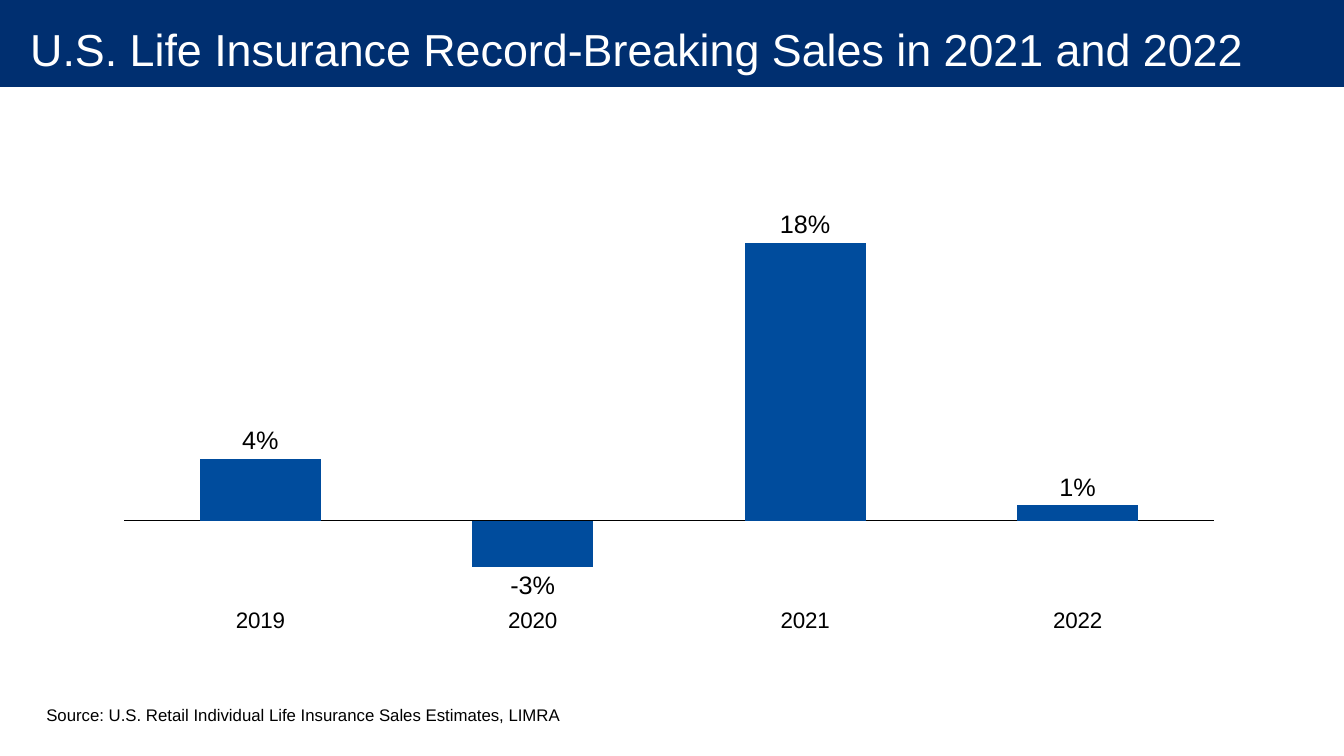
from lxml.etree import SubElement
from pptx import Presentation
from pptx.chart.data import CategoryChartData
from pptx.dml.color import RGBColor
from pptx.enum.chart import (XL_CHART_TYPE as ChartType, XL_LABEL_POSITION as LabelPosition,
                             XL_TICK_LABEL_POSITION as TickLabelPosition, XL_TICK_MARK as TickMark)
from pptx.enum.shapes import MSO_SHAPE as Shape
from pptx.enum.text import MSO_ANCHOR as Anchor
from pptx.oxml.ns import qn
from pptx.util import Pt

COLORS = {"banner": "002F70", "bar": "004C9D", "title": "FFFFFF", "text": "000000"}
SALES_GROWTH = {"2019": 0.04, "2020": -0.03, "2021": 0.18, "2022": 0.01}
PLOT_AREA = {"layoutTarget": "inner", "xMode": "edge", "yMode": "edge",
             "x": 0.054, "y": 0.162, "w": 0.94, "h": 0.709}
PAGE_WIDTH, PAGE_HEIGHT = 960, 540


def apply(target, values):
    for name, value in values.items():
        setattr(target, name, value)


class SlideBuilder:
    def __init__(self, page, font_name):
        self.page = page
        self.font_name = font_name

    def color(self, name):
        return RGBColor.from_string(COLORS[name])

    def style_font(self, font, size, color="text"):
        apply(font, {"name": self.font_name, "size": Pt(size), "bold": False})
        font.color.rgb = self.color(color)

    def banner(self, left, top, width, height):
        box = self.page.shapes.add_shape(Shape.RECTANGLE, Pt(left), Pt(top), Pt(width), Pt(height))
        box.shadow.inherit = False
        box.fill.solid()
        box.fill.fore_color.rgb = self.color("banner")
        box.line.fill.background()

    def text(self, content, left, top, width, height, size, color="text", **frame_format):
        box = self.page.shapes.add_textbox(Pt(left), Pt(top), Pt(width), Pt(height))
        apply(box.text_frame, {"word_wrap": True, **frame_format})
        para = box.text_frame.paragraphs[0]
        span = para.add_run()
        span.text = content
        self.style_font(span.font, size, color)

    def column_chart(self, values, left, top, width, height):
        data = CategoryChartData(number_format="0%")
        data.categories = list(values)
        data.add_series("Series 1", list(values.values()))
        chart = self.page.shapes.add_chart(ChartType.COLUMN_CLUSTERED, Pt(left), Pt(top),
                                           Pt(width), Pt(height), data).chart
        apply(chart, {"has_legend": False, "has_title": False})
        self.style_font(chart.font, 10)
        self.format_axes(chart)
        self.format_columns(chart.plots[0])
        self.place_plot_area(chart)

    def format_axes(self, chart):
        years = chart.category_axis
        apply(years, {"major_tick_mark": TickMark.NONE, "minor_tick_mark": TickMark.NONE,
                      "tick_label_position": TickLabelPosition.LOW})
        self.style_font(years.tick_labels.font, 16)
        years.format.line.width = Pt(0.75)
        years.format.line.color.rgb = self.color("text")
        growth = chart.value_axis
        apply(growth, {"visible": False, "has_major_gridlines": False,
                       "minimum_scale": -0.05, "maximum_scale": 0.2})
        apply(growth.tick_labels, {"number_format": "0%", "number_format_is_linked": False})

    def format_columns(self, plot):
        apply(plot, {"gap_width": 125, "vary_by_categories": False, "has_data_labels": True})
        series = plot.series[0]
        series.invert_if_negative = False
        series.format.fill.solid()
        series.format.fill.fore_color.rgb = self.color("bar")
        labels = series.data_labels
        apply(labels, {"show_value": True, "position": LabelPosition.OUTSIDE_END,
                       "number_format": "0%", "number_format_is_linked": False})
        self.style_font(labels.font, 18)

    def place_plot_area(self, chart):
        """Fix the inner plot area as fractions of the chart frame."""
        plot_area = chart.element.find(f".//{qn('c:plotArea')}")
        for layout in plot_area.findall(qn("c:layout")):
            plot_area.remove(layout)
        layout = SubElement(plot_area, qn("c:layout"))
        plot_area.insert(0, layout)
        manual = SubElement(layout, qn("c:manualLayout"))
        for name, value in PLOT_AREA.items():
            SubElement(manual, qn(f"c:{name}")).set("val", str(value))


def main():
    deck = Presentation()
    apply(deck, {"slide_width": Pt(PAGE_WIDTH), "slide_height": Pt(PAGE_HEIGHT)})
    builder = SlideBuilder(deck.slides.add_slide(deck.slide_layouts[6]), "Arial")
    builder.banner(0, 0, PAGE_WIDTH, 62)
    builder.text("U.S. Life Insurance Record-Breaking Sales in 2021 and 2022",
                 0, 0, PAGE_WIDTH, 70, 32, "title", vertical_anchor=Anchor.MIDDLE,
                 margin_left=Pt(21.6), margin_right=Pt(14.4), margin_top=0, margin_bottom=0)
    builder.column_chart(SALES_GROWTH, 44, 88.5, 828, 389)
    builder.text("Source: U.S. Retail Individual Life Insurance Sales Estimates, LIMRA",
                 26, 500, 384, 21.6, 12)
    deck.save("out.pptx")


if __name__ == "__main__":
    main()
